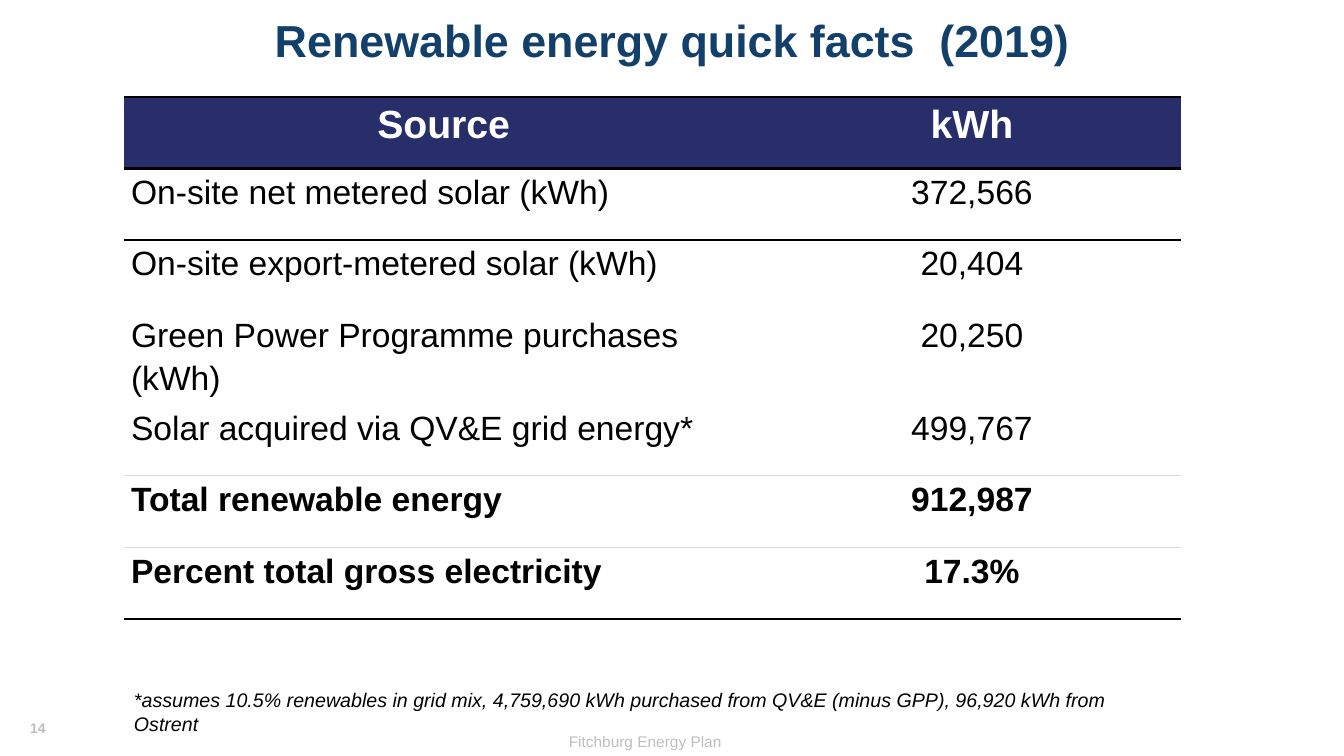
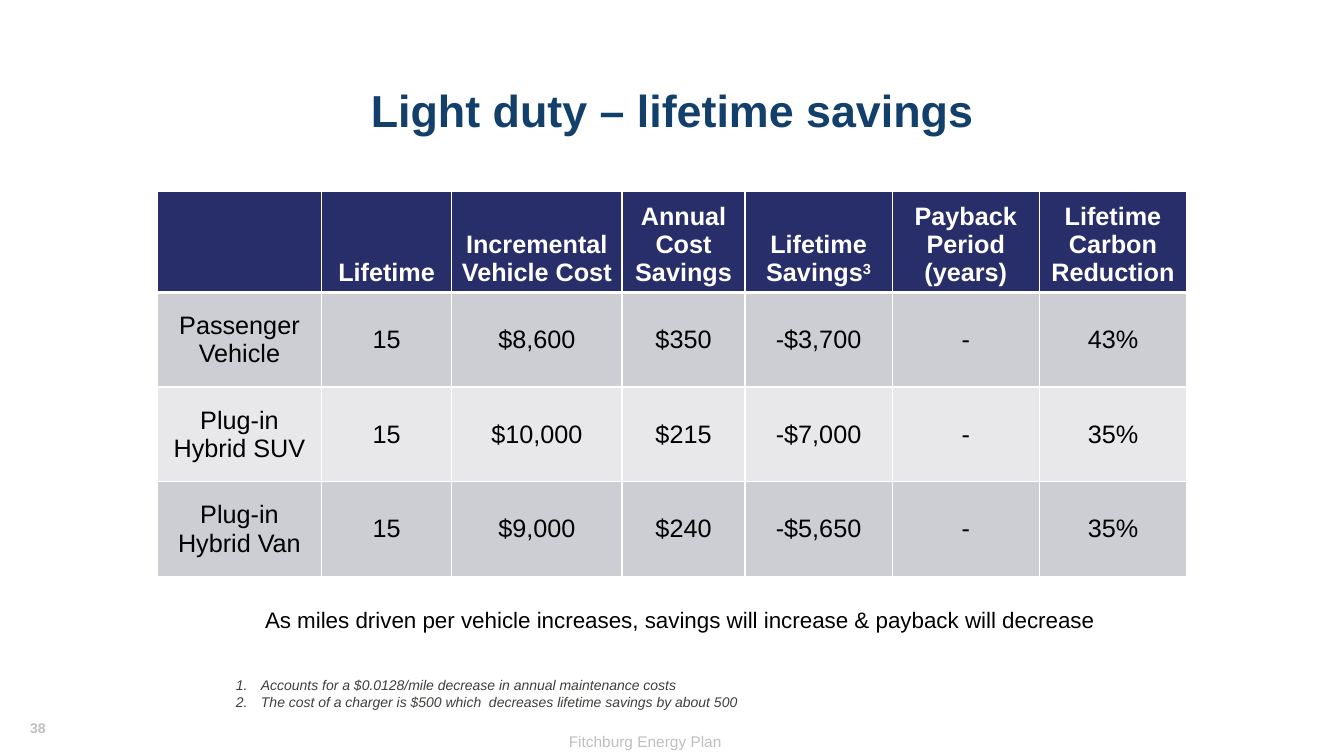
from lxml import etree
from pptx import Presentation, util as u
from pptx.dml.color import RGBColor
from pptx.enum import text as t
from pptx.oxml import ns

PX = 9144
LEFT, CENTER = t.PP_ALIGN.LEFT, t.PP_ALIGN.CENTER
TOP, MIDDLE, BOTTOM = t.MSO_ANCHOR.TOP, t.MSO_ANCHOR.MIDDLE, t.MSO_ANCHOR.BOTTOM
PLAIN_TABLE = "{2D5ABB26-0587-4C30-8999-92F81FD0307C}"


def px(length):
    return u.Emu(length * PX)


def rgb(value):
    return RGBColor.from_string(value)


class Pages:
    """Holds the shared style and the current slide, and draws each kind of element."""

    FONT = "Arial"
    BLACK, WHITE, NAVY, TITLE = "000000", "FFFFFF", "272E69", "13406A"
    FOOTER, NOTE, RULE = "BFBFBF", "3E3E3A", "DADAD7"
    BANDS = ("CDCDD4", "E8E8EB")

    def __init__(self):
        self.deck = Presentation()
        self.deck.slide_width, self.deck.slide_height = px(1333), px(750)
        self.page = None

    def new_page(self, number, title, title_top):
        self.page = self.deck.slides.add_slide(self.deck.slide_layouts[6])
        self.text((435, 721, 410, 29), ["Fitchburg Energy Plan"], 11, self.FOOTER, align=CENTER)
        self.text((20, 709, 37, 27), [str(number)], 10, self.FOOTER, bold=True, wrap=False)
        self.text((92, title_top, 1150, 145), [title], 32, self.TITLE, bold=True,
                  align=CENTER, anchor=MIDDLE, spacing=0.9)

    def paragraph(self, para, words, size, color=BLACK, bold=False, italic=False,
                  align=LEFT, spacing=None, numbered=False):
        para.alignment = align
        if spacing:
            para.line_spacing = spacing
        if numbered:
            props = para._p.get_or_add_pPr()
            props.set("marL", str(px(25)))
            props.set("indent", str(px(-25)))
            etree.SubElement(props, ns.qn("a:buAutoNum"), type="arabicPeriod")
        font = para.font
        font.name, font.size, font.color.rgb = self.FONT, u.Pt(size), rgb(color)
        font.bold, font.italic = bold, italic
        base, _, raised = words.partition("^")
        para.add_run().text = base
        if raised:
            span = para.add_run()
            span.text = raised
            span.font._element.set("baseline", "30000")

    def text(self, place, lines, size, color=BLACK, anchor=TOP, wrap=True, **look):
        box = self.page.shapes.add_textbox(*map(px, place))
        frame = box.text_frame
        frame.word_wrap, frame.vertical_anchor = wrap, anchor
        for index, line in enumerate(lines):
            para = frame.add_paragraph() if index else frame.paragraphs[0]
            self.paragraph(para, line, size, color, **look)

    def table(self, left, top, widths, heights, rows, look):
        frame = self.page.shapes.add_table(len(rows), len(widths), px(left), px(top),
                                           px(sum(widths)), px(sum(heights)))
        grid = frame.table
        grid.first_row = grid.horz_banding = False
        grid._tbl.tblPr.find(ns.qn("a:tableStyleId")).text = PLAIN_TABLE
        for column, width in zip(grid.columns, widths):
            column.width = px(width)
        for r, (row, height) in enumerate(zip(rows, heights)):
            grid.rows[r].height = px(height)
            for c, words in enumerate(row):
                self.cell(grid.cell(r, c), words, **look(r, c))

    def cell(self, cell, words, size, fill, borders, anchor=TOP, tight=True, **look):
        for side in "LRTB":
            if side in borders:
                self.border(cell, side, *borders[side])
        cell.fill.solid()
        cell.fill.fore_color.rgb = rgb(fill)
        cell.vertical_anchor = anchor
        if tight:
            cell.margin_left = cell.margin_right = px(7)
            cell.margin_top = cell.margin_bottom = 0
        self.paragraph(cell.text_frame.paragraphs[0], words, size, **look)

    def border(self, cell, side, color, points):
        line = etree.SubElement(cell._tc.get_or_add_tcPr(), ns.qn(f"a:ln{side}"),
                                w=str(u.Pt(points)))
        solid = etree.SubElement(line, ns.qn("a:solidFill"))
        etree.SubElement(solid, ns.qn("a:srgbClr"), val=color)


def quick_facts(pages):
    heavy, light = (pages.BLACK, 2), (pages.RULE, 0.75)
    row_borders = {0: {"T": heavy, "B": heavy}, 1: {"T": heavy}, 4: {"B": light},
                   5: {"T": light, "B": light}, 6: {"T": light, "B": heavy}}

    def look(r, c):
        header = r == 0
        return dict(size=28 if header else 24, bold=header or r >= 5, spacing=1.15,
                    color=pages.WHITE if header else pages.BLACK,
                    fill=pages.NAVY if header else pages.WHITE,
                    align=CENTER if header or c else LEFT, borders=row_borders.get(r, {}))

    pages.new_page(14, "Renewable energy quick facts  (2019)", -30)
    rows = [
        ("Source", "kWh"),
        ("On-site net metered solar (kWh)", "372,566"),
        ("On-site export-metered solar (kWh)", "20,404"),
        ("Green Power Programme purchases (kWh)", "20,250"),
        ("Solar acquired via QV&E grid energy*", "499,767"),
        ("Total renewable energy", "912,987"),
        ("Percent total gross electricity", "17.3%"),
    ]
    pages.table(123, 96, (634, 414), [71] * len(rows), rows, look)
    pages.text((123, 678, 1048, 34),
               ["*assumes 10.5% renewables in grid mix, 4,759,690 kWh purchased from QV&E "
                "(minus GPP), 96,920 kWh from Ostrent"], 14, italic=True)


def lifetime_savings(pages):
    thin, thick = (pages.WHITE, 1), (pages.WHITE, 3)

    def look(r, c):
        header = r == 0
        borders = {"L": thin, "R": thin, "B": thick if header else thin}
        if header:
            borders["T"] = thin
        return dict(size=18, bold=header, align=CENTER, borders=borders,
                    color=pages.WHITE if header else pages.BLACK,
                    fill=pages.NAVY if header else pages.BANDS[(r - 1) % 2],
                    anchor=BOTTOM if header else MIDDLE, tight=not header and c > 0)

    pages.new_page(38, "Light duty – lifetime savings", 40)
    rows = [
        ("", "Lifetime", "Incremental Vehicle Cost", "Annual Cost Savings",
         "Lifetime Savings^3", "Payback Period (years)", "Lifetime Carbon Reduction"),
        ("Passenger Vehicle", "15", "$8,600", "$350", "-$3,700", "-", "43%"),
        ("Plug-in Hybrid SUV", "15", "$10,000", "$215", "-$7,000", "-", "35%"),
        ("Plug-in Hybrid Van", "15", "$9,000", "$240", "-$5,650", "-", "35%"),
    ]
    pages.table(156, 190, (163, 129, 169, 122, 146, 146, 146), (100, 94, 94, 94), rows, look)
    pages.text((224, 666, 874, 44),
               ["Accounts for a $0.0128/mile decrease in annual maintenance costs",
                "The cost of a charger is $500 which  decreases lifetime savings by about 500"],
               10, pages.NOTE, italic=True, numbered=True)
    pages.text((253, 596, 845, 37),
               ["As miles driven per vehicle increases, savings will increase "
                "& payback will decrease"], 16)


def main():
    pages = Pages()
    quick_facts(pages)
    lifetime_savings(pages)
    pages.deck.save("out.pptx")


if __name__ == "__main__":
    main()
